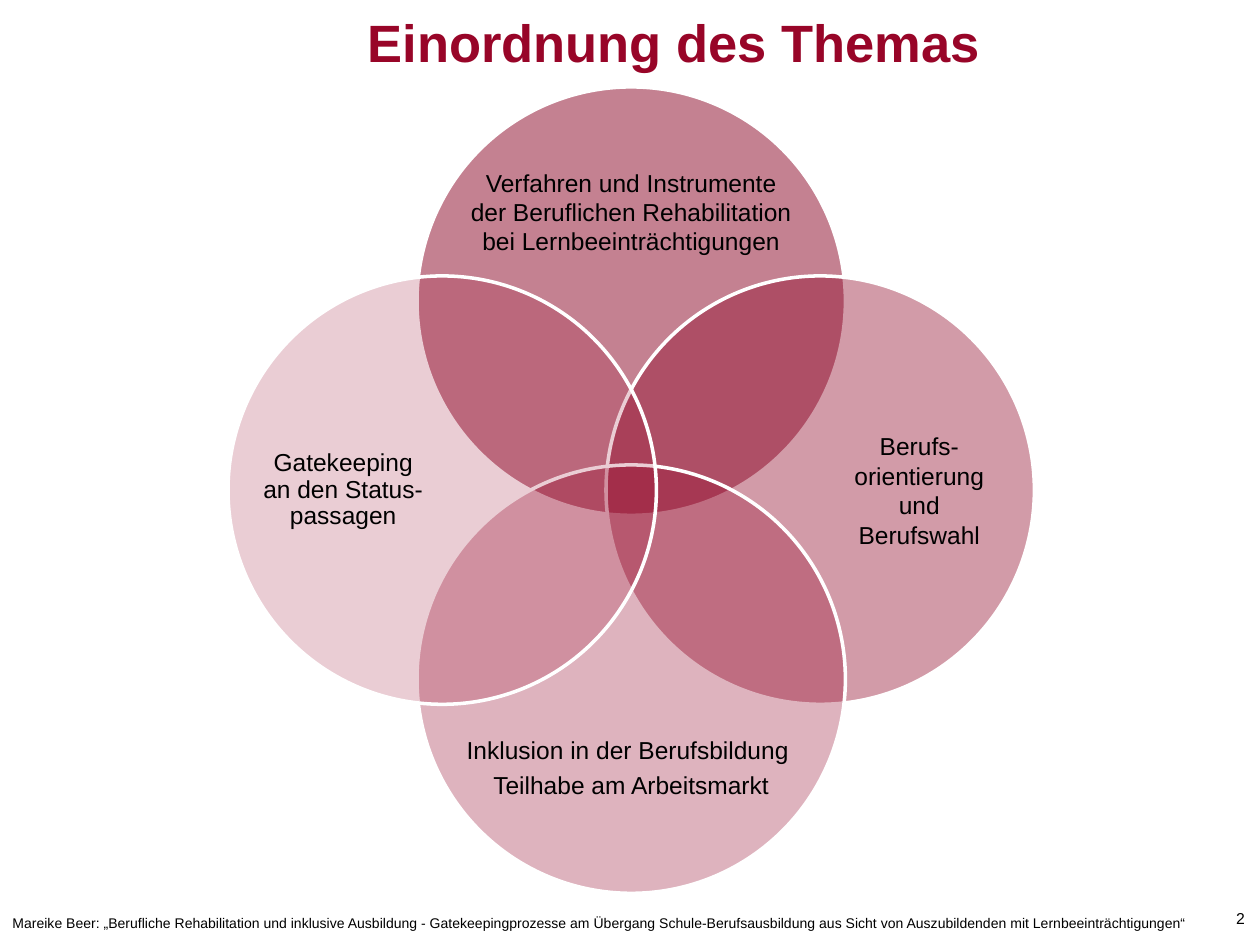
from dataclasses import dataclass

from lxml import etree
from pptx import Presentation
from pptx.dml.color import RGBColor
from pptx.enum.shapes import MSO_SHAPE
from pptx.enum.text import MSO_ANCHOR, PP_ALIGN
from pptx.oxml.ns import qn
from pptx.util import Pt

OVAL = MSO_SHAPE.OVAL
TOP, MIDDLE = MSO_ANCHOR.TOP, MSO_ANCHOR.MIDDLE
LEFT, CENTER, RIGHT = PP_ALIGN.LEFT, PP_ALIGN.CENTER, PP_ALIGN.RIGHT

BLACK = RGBColor(0x00, 0x00, 0x00)
WHITE = RGBColor(0xFF, 0xFF, 0xFF)
CRIMSON = RGBColor(0x98, 0x05, 0x28)
RED_TOP = RGBColor(0x8A, 0x05, 0x24)
RED_RIGHT = RGBColor(0x8F, 0x05, 0x26)
RED_BOTTOM = RGBColor(0x94, 0x05, 0x28)
RED_LEFT = RGBColor(0x99, 0x06, 0x29)

# Venn geometry in points
CENTER_X, CENTER_Y = 360.7, 280.1
DIAMETER = 244.8
OFFSET = 108
WIDE_LABEL = (188.6, 77.8)
TALL_LABEL = (94.3, 188.6)


@dataclass(frozen=True)
class Box:
    left: float
    top: float
    width: float
    height: float

    @classmethod
    def around(cls, x: float, y: float, width: float, height: float) -> "Box":
        return cls(x - width / 2, y - height / 2, width, height)

    def in_points(self) -> tuple[Pt, Pt, Pt, Pt]:
        return Pt(self.left), Pt(self.top), Pt(self.width), Pt(self.height)


@dataclass(frozen=True)
class Topic:
    direction: tuple[int, int]  # unit step from the centre of the diagram
    color: RGBColor
    opacity: int  # percent
    label_shift: tuple[float, float]  # label centre from the diagram centre
    label_size: tuple[float, float]
    lines: tuple[str, ...]
    tight: bool = False


TOPICS = (
    Topic((0, -1), RED_TOP, 50, (0, -159.1), WIDE_LABEL,
          ("Verfahren und Instrumente der Beruflichen Rehabilitation "
           "bei Lernbeeinträchtigungen",)),
    Topic((1, 0), RED_RIGHT, 40, (164.6, 0), TALL_LABEL,
          ("Berufs-orientierung und Berufswahl",)),
    Topic((0, 1), RED_BOTTOM, 30, (0, 159.1), WIDE_LABEL,
          ("Inklusion in der Berufsbildung ", "Teilhabe am Arbeitsmarkt"), True),
    Topic((-1, 0), RED_LEFT, 20, (-164.6, 0), TALL_LABEL,
          ("Gatekeeping an den Status-passagen",), True),
)


def add_text(slide, box: Box, lines: tuple[str, ...], size: float,
             color: RGBColor = BLACK, bold: bool = False, align=LEFT,
             anchor=TOP, margins: tuple[float, float] = (0, 0),
             paragraph_format: dict | None = None) -> None:
    frame = slide.shapes.add_textbox(*box.in_points()).text_frame
    side, end = margins
    frame_format = {
        "word_wrap": True, "vertical_anchor": anchor,
        "margin_left": Pt(side), "margin_right": Pt(side),
        "margin_top": Pt(end), "margin_bottom": Pt(end),
    }
    for name, value in frame_format.items():
        setattr(frame, name, value)
    for index, line in enumerate(lines):
        paragraph = frame.add_paragraph() if index else frame.paragraphs[0]
        for name, value in {"alignment": align, **(paragraph_format or {})}.items():
            setattr(paragraph, name, value)
        run = paragraph.add_run()
        run.text = line
        for name, value in {"name": "Arial", "size": Pt(size), "bold": bold}.items():
            setattr(run.font, name, value)
        run.font.color.rgb = color


def add_circle(slide, topic: Topic) -> None:
    step_x, step_y = topic.direction
    box = Box.around(CENTER_X + step_x * OFFSET, CENTER_Y + step_y * OFFSET,
                     DIAMETER, DIAMETER)
    circle = slide.shapes.add_shape(OVAL, *box.in_points())
    circle.shadow.inherit = False
    circle.fill.solid()
    circle.fill.fore_color.rgb = topic.color
    fill_color = circle.fill._xPr.find(f"{qn('a:solidFill')}/{qn('a:srgbClr')}")
    etree.SubElement(fill_color, qn("a:alpha")).set("val", str(topic.opacity * 1000))
    circle.line.color.rgb = WHITE
    circle.line.width = Pt(2)


def add_topic(slide, topic: Topic) -> None:
    add_circle(slide, topic)
    shift_x, shift_y = topic.label_shift
    box = Box.around(CENTER_X + shift_x, CENTER_Y + shift_y, *topic.label_size)
    spacing = {"line_spacing": 0.9, "space_after": Pt(4.9)} if topic.tight else {}
    add_text(slide, box, topic.lines, 14, align=CENTER, anchor=MIDDLE,
             paragraph_format=spacing)


def main() -> None:
    presentation = Presentation()
    presentation.slide_width, presentation.slide_height = Pt(720), Pt(540)
    slide = presentation.slides.add_slide(presentation.slide_layouts[6])

    # Page number and title
    add_text(slide, Box(2.9, 509.8, 708.5, 30.2), ("2",), 9,
             align=RIGHT, anchor=MIDDLE)
    add_text(slide, Box(210.2, 5.8, 608.4, 78.5), ("Einordnung des Themas",), 30,
             color=CRIMSON, bold=True)

    # Overlapping topics
    for topic in TOPICS:
        add_topic(slide, topic)

    # Footer
    add_text(slide, Box(0, 519.1, 711.4, 17.3),
             ("Mareike Beer: „Berufliche Rehabilitation und inklusive Ausbildung - "
              "Gatekeepingprozesse am Übergang Schule-Berufsausbildung aus Sicht von "
              "Auszubildenden mit Lernbeeinträchtigungen“",),
             8, margins=(7.2, 3.6))

    presentation.save("out.pptx")


if __name__ == "__main__":
    main()
